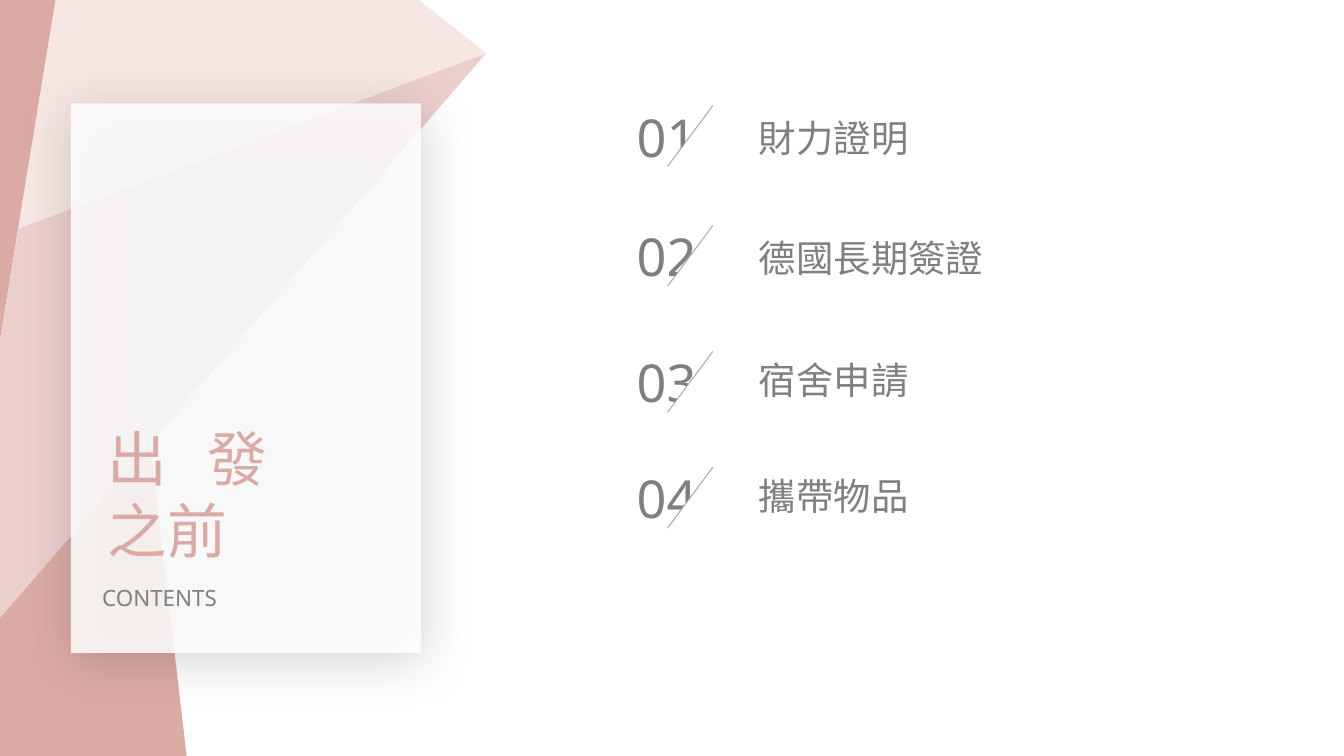
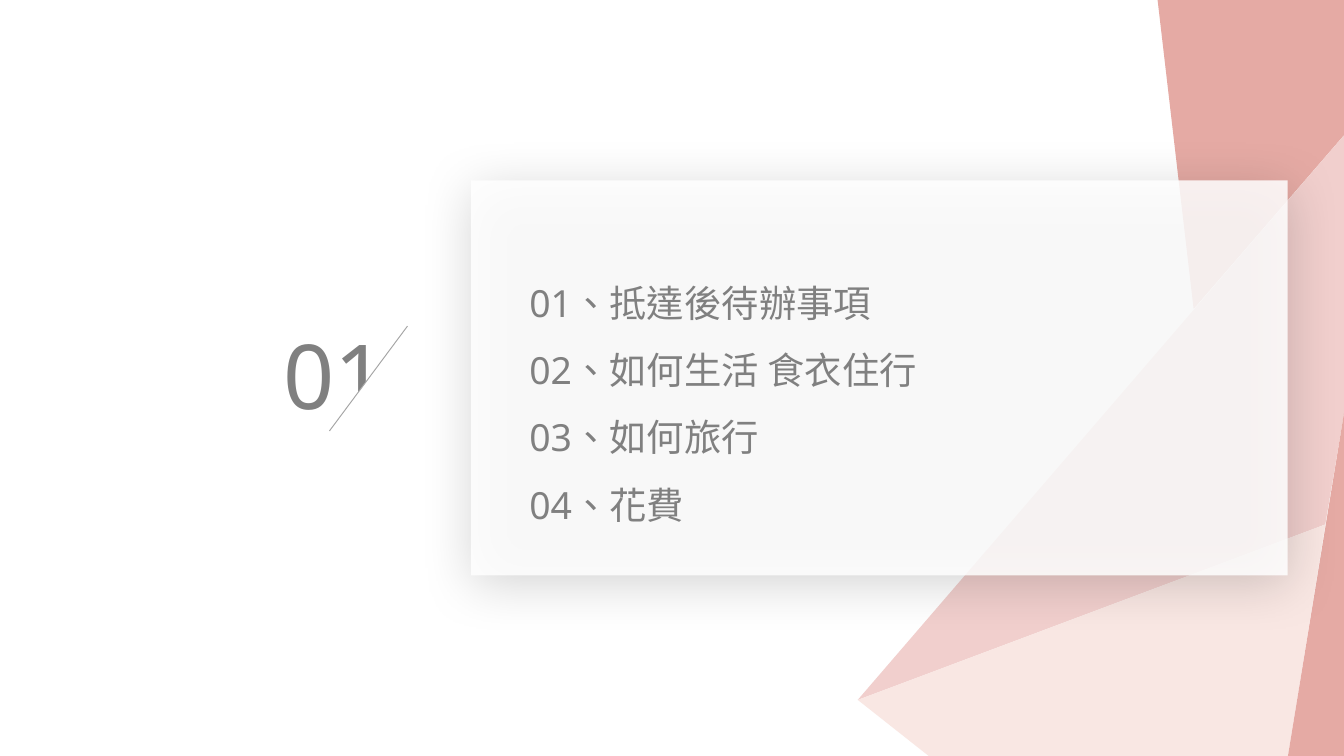
from lxml import etree
from pptx import Presentation
from pptx.dml.color import RGBColor
from pptx.enum.lang import MSO_LANGUAGE_ID
from pptx.enum.shapes import MSO_CONNECTOR, MSO_SHAPE
from pptx.enum.text import MSO_AUTO_SIZE, PP_ALIGN
from pptx.oxml.ns import qn
from pptx.util import Pt

RECT, TRIANGLE = MSO_SHAPE.RECTANGLE, MSO_SHAPE.RIGHT_TRIANGLE
STRAIGHT = MSO_CONNECTOR.STRAIGHT
JUSTIFY = PP_ALIGN.JUSTIFY
FIT_SHAPE = MSO_AUTO_SIZE.SHAPE_TO_FIT_TEXT
CHINESE = MSO_LANGUAGE_ID.TRADITIONAL_CHINESE

FONT = "Noto Sans"
WHITE = RGBColor(0xFF, 0xFF, 0xFF)
GREY = RGBColor(0x80, 0x80, 0x80)
SLASH_GREY = RGBColor(0xA5, 0xA5, 0xA5)
ROSE = RGBColor(0xD9, 0xAB, 0xA4)
# Facet colours: corner, large, pale, edge
CONTENTS_TONES = (RGBColor(0xDB, 0xAC, 0xA5), RGBColor(0xEA, 0xCF, 0xCD),
                  RGBColor(0xF6, 0xE7, 0xE4), ROSE)
SECTION_TONES = (RGBColor(0xE5, 0xAA, 0xA4), RGBColor(0xF1, 0xCF, 0xCD),
                 RGBColor(0xF9, 0xE7, 0xE3), RGBColor(0xE5, 0xAA, 0xA4))

WIDTH, HEIGHT = 720, 405
BLEED = -1.5
FACETS = (
    ((80.5, 238), (100, HEIGHT), (0, HEIGHT), (0, 331)),
    ((260.5, 28.5), (10, 122.5), (0, 182), (0, 331)),
    ((260.5, 28.5), (222.5, BLEED), (30, BLEED), (10, 122.5)),
    ((30, BLEED), (0, BLEED), (0, 182)),
)

# Number top, label top, label width, label
CONTENTS = (
    (52.6, 58.4, 95, "財力證明"),
    (116.8, 122.6, 135, "德國長期簽證"),
    (184.3, 188, 95, "宿舍申請"),
    (246.3, 250, 95, "攜帶物品"),
)
TOPICS = ("01、抵達後待辦事項", "02、如何生活 食衣住行", "03、如何旅行", "04、花費")


def add_text(s, box, lines, size, color=GREY, wrap=True, inset=7.2,
             align=None, spacing=None):
    tf = s.shapes.add_textbox(*map(Pt, box)).text_frame
    tf.word_wrap = wrap
    tf.auto_size = FIT_SHAPE
    tf.margin_left = tf.margin_right = Pt(inset)
    tf.text = "\n".join(lines)
    for p in tf.paragraphs:
        p.alignment = align
        p.line_spacing = spacing
        for r in p.runs:
            r.font.name = FONT
            r.font.size = Pt(size)
            r.font.color.rgb = color
            r.font.language_id = CHINESE


def fill_plain(sp, color):
    sp.shadow.inherit = False
    sp.fill.solid()
    sp.fill.fore_color.rgb = color
    sp.line.fill.background()


def add_facets(s, tones, turned=False):
    """Folded-paper corner; turned places it at the opposite corner."""
    for points, color in zip(FACETS, tones):
        if turned:
            points = [(WIDTH - x, HEIGHT + BLEED - y) for x, y in points]
        start, *rest = [(Pt(x), Pt(y)) for x, y in points]
        builder = s.shapes.build_freeform(*start)
        builder.add_line_segments(rest, close=True)
        fill_plain(builder.convert_to_shape(), color)


def add_card(s, box):
    """Translucent white card with a soft shadow."""
    sp = s.shapes.add_shape(RECT, *map(Pt, box))
    fill_plain(sp, WHITE)
    props = sp.element.spPr
    color = props.find(qn("a:solidFill")).find(qn("a:srgbClr"))
    etree.SubElement(color, qn("a:alpha"), val="85000")
    shadow = etree.SubElement(
        props.find(qn("a:effectLst")), qn("a:outerShdw"), blurRad=str(Pt(29)),
        dist=str(Pt(5)), dir=str(77 * 60000), algn="t", rotWithShape="0")
    color = etree.SubElement(shadow, qn("a:srgbClr"), val="000000")
    etree.SubElement(color, qn("a:alpha"), val="20000")


def add_slash(s, x, y, w, h):
    """White triangle that cuts the number, with a thin line on its edge."""
    # The triangle is turned a quarter, so its sides swap about the centre
    sp = s.shapes.add_shape(TRIANGLE, Pt(x + (w - h) / 2),
                            Pt(y + (h - w) / 2), Pt(h), Pt(w))
    sp.rotation = 270
    fill_plain(sp, WHITE)
    line = s.shapes.add_connector(STRAIGHT, Pt(x + w), Pt(y), Pt(x), Pt(y + h))
    line.line.color.rgb = SLASH_GREY
    line.line.width = Pt(0.5)
    etree.SubElement(line.element.spPr, qn("a:effectLst"))


def add_contents_row(s, x, number, top, label_top, label_width, label):
    add_text(s, (x, top, 46.8, 41), [f"{number:02}"], 28, wrap=False)
    add_text(s, (x + 65.5, label_top, label_width, 31.5), [label], 20,
             wrap=False)
    add_slash(s, x + 23.6, top + 4, 24.3, 32.6)


def contents_slide(prs):
    s = prs.slides.add_slide(prs.slide_layouts[6])
    add_facets(s, CONTENTS_TONES)
    # Title card
    x, y = 38, 55.4
    add_card(s, (x, y, 187.5, 294.4))
    add_text(s, (x + 19.6, y + 167, 85.7, 85), ["出發之前"], 32, ROSE,
             inset=0, align=JUSTIFY)
    add_text(s, (x + 16.7, y + 254.2, 85.7, 21.8), ["CONTENTS"], 12,
             inset=0, align=JUSTIFY)
    # Numbered list
    for number, row in enumerate(CONTENTS, 1):
        add_contents_row(s, 334, number, *row)


def section_slide(prs):
    s = prs.slides.add_slide(prs.slide_layouts[6])
    add_facets(s, SECTION_TONES, turned=True)
    x, y = 252.3, 96.6
    add_card(s, (x, y, 437.5, 211.7))
    # Section number
    add_text(s, (144.7, 167.8, 70.6, 65.5), ["01"], 48)
    add_slash(s, 176.5, 174.7, 41.8, 56.2)
    # Topics on the card
    add_text(s, (x + 24.2, y + 38, 227.5, 152.6), TOPICS, 20, spacing=1.5)


def main():
    prs = Presentation()
    prs.slide_width, prs.slide_height = Pt(WIDTH), Pt(HEIGHT)
    contents_slide(prs)
    section_slide(prs)
    prs.save("out.pptx")


if __name__ == "__main__":
    main()
